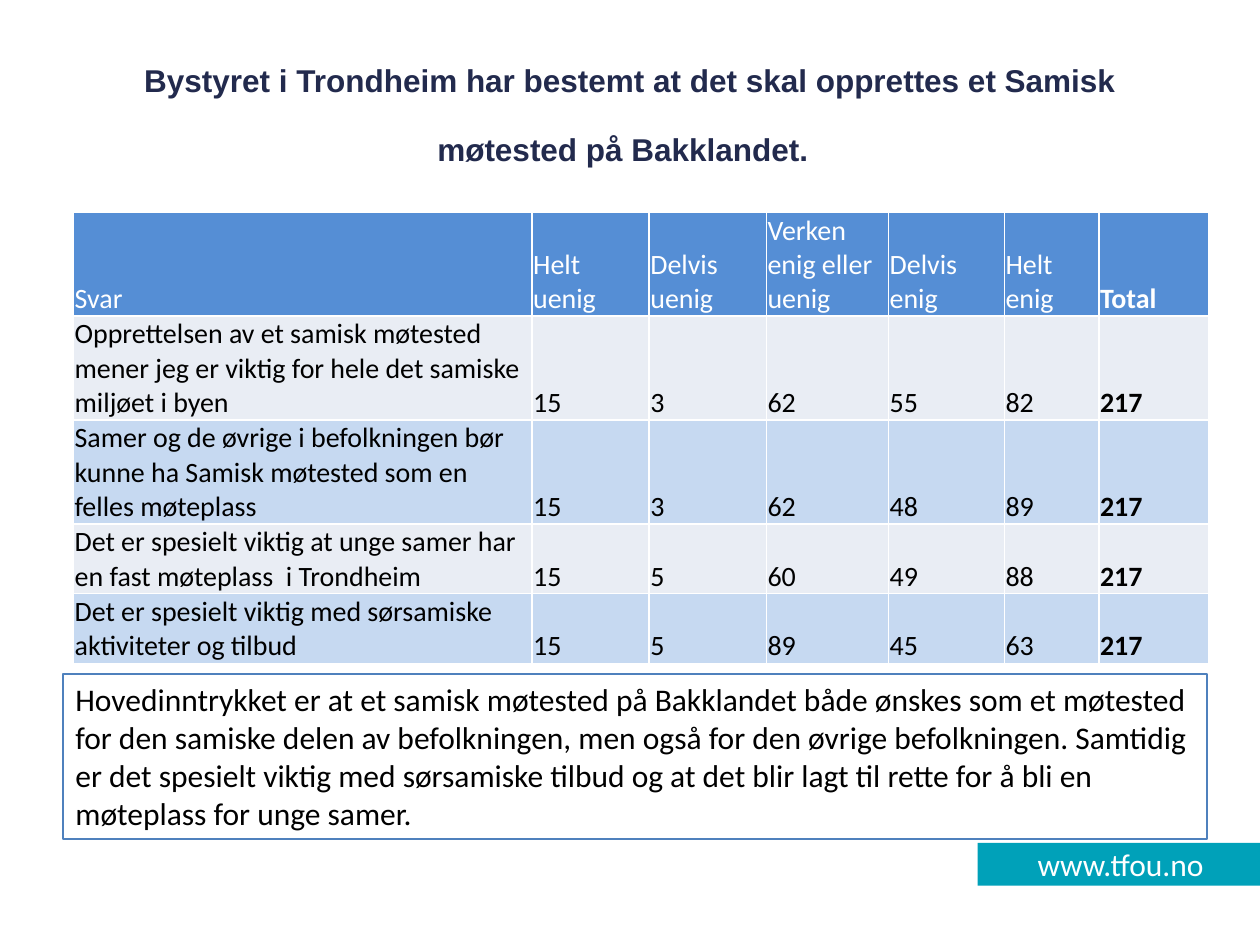
from typing import NamedTuple

from lxml.etree import SubElement
from pptx import Presentation
from pptx.dml.color import RGBColor
from pptx.enum.shapes import MSO_SHAPE
from pptx.enum.text import MSO_ANCHOR, PP_ALIGN
from pptx.oxml.ns import qn
from pptx.util import Pt

COLOURS = {
    "navy": "222A4D",
    "header": "558ED5",
    "pale": "E9EDF4",
    "light": "C6D9F1",
    "teal": "00A1B9",
    "outline": "4F81BD",
    "black": "000000",
    "white": "FFFFFF",
}


class Area(NamedTuple):
    left: float
    top: float
    width: float
    height: float

    def lengths(self) -> list:
        return [Pt(value) for value in self]


class Answer(NamedTuple):
    statement: str
    counts: tuple
    height: float


TITLE_AREA = Area(36, 22.3, 648, 90)
TABLE_AREA = Area(42, 121.2, 648.7, 256)
SUMMARY_AREA = Area(36, 385.2, 653.8, 94.3)
WEB_AREA = Area(558.7, 481.7, 163.4, 24.5)

COLUMN_WIDTHS = [262, 67, 67, 69.8, 66.2, 54, 62.7]
HEADINGS = ["Svar", "Helt uenig", "Delvis uenig", "Verken enig eller uenig",
            "Delvis enig", "Helt enig", "Total"]
ANSWERS = [
    Answer("Opprettelsen av et samisk møtested mener jeg er viktig for hele det "
           "samiske miljøet i byen", (15, 3, 62, 55, 82), 59),
    Answer("Samer og de øvrige i befolkningen bør kunne ha Samisk møtested som "
           "en felles møteplass", (15, 3, 62, 48, 89), 59),
    Answer("Det er spesielt viktig at unge samer har en fast møteplass  i Trondheim",
           (15, 5, 60, 49, 88), 39.5),
    Answer("Det er spesielt viktig med sørsamiske aktiviteter og tilbud",
           (15, 5, 89, 45, 63), 39.5),
]
HEADER_HEIGHT = 59
SUMMARY = [
    "Hovedinntrykket er at et samisk møtested på Bakklandet både ønskes som et møtested",
    "for den samiske delen av befolkningen, men også for den øvrige befolkningen. "
    "Samtidig er det spesielt viktig med sørsamiske tilbud og at det blir lagt til "
    "rette for å bli en møteplass for unge samer.",
]


def colour(name: str) -> RGBColor:
    return RGBColor.from_string(COLOURS[name])


def set_values(target, **values) -> None:
    for name, value in values.items():
        setattr(target, name, value)


def add_span(para, text: str, tint: str, size: float = 18,
             face: str = "Calibri", bold: bool = False) -> None:
    span = para.add_run()
    span.text = text
    set_values(span.font, name=face, size=Pt(size), bold=bold)
    span.font.color.rgb = colour(tint)


def add_box(page, area: Area, texts: list, tint: str, align: PP_ALIGN,
            anchor: MSO_ANCHOR):
    box = page.shapes.add_shape(MSO_SHAPE.RECTANGLE, *area.lengths())
    box.shadow.inherit = False
    set_values(box.text_frame, word_wrap=True, vertical_anchor=anchor)
    for index, text in enumerate(texts):
        para = box.text_frame.add_paragraph() if index else box.text_frame.paragraphs[0]
        para.alignment = align
        add_span(para, text, tint)
    return box


def add_borders(cell, tint: str, width: float) -> None:
    properties = cell._tc.get_or_add_tcPr()
    for position, side in enumerate(("a:lnL", "a:lnR", "a:lnT", "a:lnB")):
        line = properties.makeelement(qn(side), {"w": str(int(Pt(width)))})
        fill = SubElement(line, qn("a:solidFill"))
        SubElement(fill, qn("a:srgbClr"), val=COLOURS[tint])
        properties.insert(position, line)


def fill_cell(cell, text: str, fill: str, tint: str, bold: bool) -> None:
    set_values(cell, margin_left=Pt(0.7), margin_right=Pt(0.7), margin_top=Pt(0.7),
               margin_bottom=0, vertical_anchor=MSO_ANCHOR.BOTTOM)
    cell.fill.solid()
    cell.fill.fore_color.rgb = colour(fill)
    add_span(cell.text_frame.paragraphs[0], text, tint, size=16, bold=bold)
    add_borders(cell, "white", 1)


def add_answers(page) -> None:
    rows = [HEADINGS] + [[answer.statement, *answer.counts, sum(answer.counts)]
                         for answer in ANSWERS]
    heights = [HEADER_HEIGHT] + [answer.height for answer in ANSWERS]
    table = page.shapes.add_table(len(rows), len(HEADINGS), *TABLE_AREA.lengths()).table
    for column, width in zip(table.columns, COLUMN_WIDTHS):
        column.width = Pt(width)
    for row_index, (values, height) in enumerate(zip(rows, heights)):
        table.rows[row_index].height = Pt(height)
        band = "pale" if row_index % 2 else "light"
        fill, tint = (band, "black") if row_index else ("header", "white")
        for column_index, value in enumerate(values):
            fill_cell(table.cell(row_index, column_index), str(value), fill, tint,
                      bold=column_index == len(HEADINGS) - 1)


def main() -> None:
    deck = Presentation()
    set_values(deck, slide_width=Pt(720), slide_height=Pt(540))
    page = deck.slides.add_slide(deck.slide_layouts[5])

    # Web address band
    band = add_box(page, WEB_AREA, ["www.tfou.no"], "white", PP_ALIGN.CENTER,
                   MSO_ANCHOR.MIDDLE)
    band.fill.solid()
    band.fill.fore_color.rgb = colour("teal")
    band.line.fill.background()

    # Title; the larger closing space opens up the last line
    title = page.shapes.title
    set_values(title, **dict(zip(Area._fields, TITLE_AREA.lengths())))
    set_values(title.text_frame, word_wrap=True, vertical_anchor=MSO_ANCHOR.MIDDLE)
    para = title.text_frame.paragraphs[0]
    para.alignment = PP_ALIGN.CENTER
    add_span(para, "Bystyret i Trondheim har bestemt at det skal opprettes et "
             "Samisk møtested på Bakklandet.", "navy", face="Arial", bold=True)
    add_span(para, " ", "navy", size=36, bold=True)

    # Answers
    add_answers(page)

    # Summary
    summary = add_box(page, SUMMARY_AREA, SUMMARY, "black", PP_ALIGN.LEFT,
                      MSO_ANCHOR.TOP)
    summary.fill.background()
    summary.line.color.rgb = colour("outline")
    summary.line.width = Pt(0.75)

    deck.save("out.pptx")


if __name__ == "__main__":
    main()
